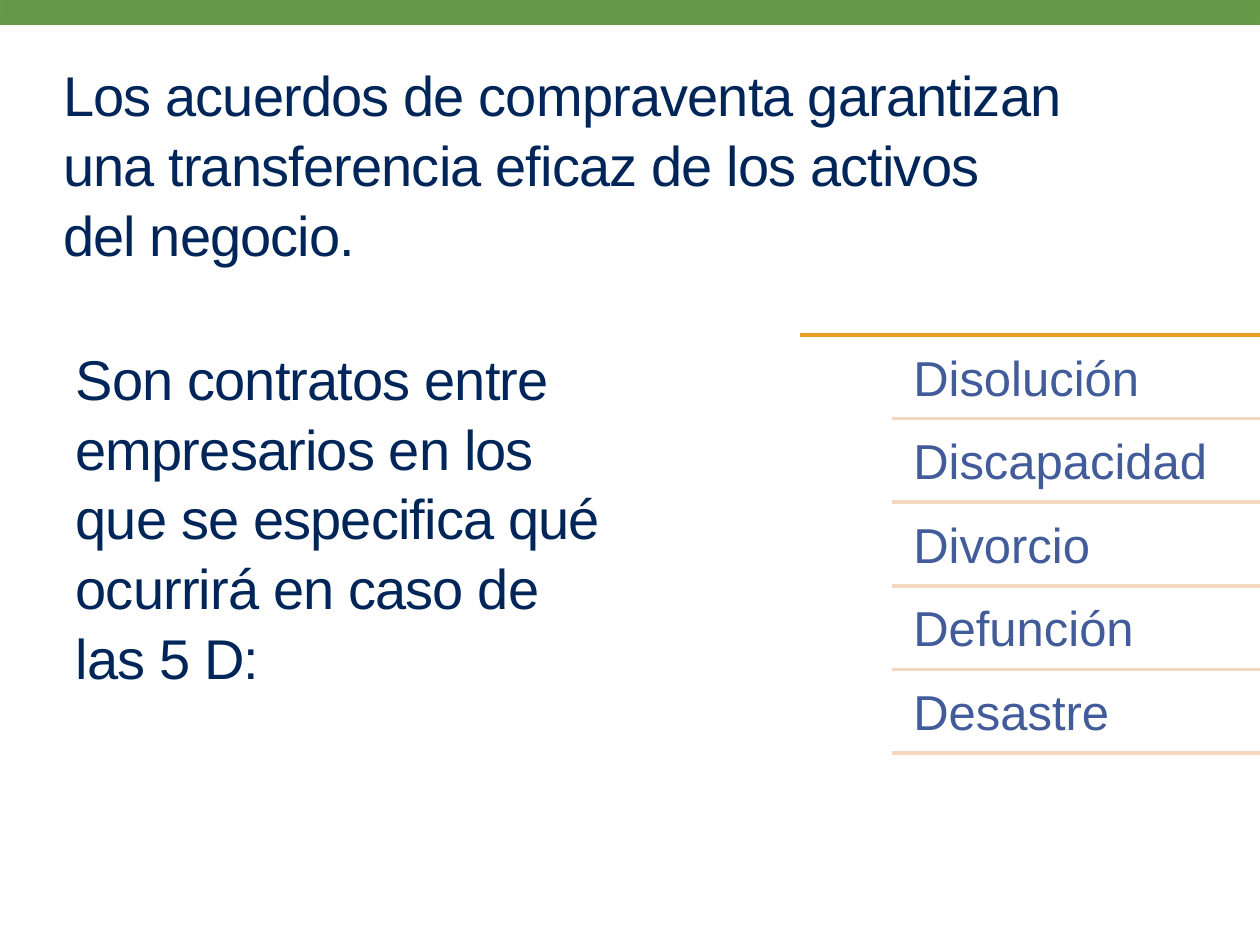
from pptx import Presentation
from pptx.dml.color import RGBColor
from pptx.enum.shapes import MSO_CONNECTOR as Connector, MSO_SHAPE as Shape
from pptx.enum.text import MSO_ANCHOR as Anchor, MSO_AUTO_SIZE as AutoSize, PP_ALIGN as Align
from pptx.oxml.ns import qn
from pptx.util import Pt

NAVY = RGBColor(0x00, 0x26, 0x59)
BLUE = RGBColor(0x41, 0x5B, 0x9B)
GREEN = RGBColor(0x66, 0x99, 0x47)
GREEN_EDGE = RGBColor(0x67, 0x9A, 0x47)
ORANGE = RGBColor(0xEA, 0x9F, 0x24)
PEACH = RGBColor(0xF5, 0xD6, 0xBE)

TITLE_LINES = [
    "Los acuerdos de compraventa garantizan",
    "una transferencia eficaz de los activos",
    "del negocio.",
]
DEFINITION = ("Son contratos entre empresarios en los que se especifica "
              "qué ocurrirá en caso de las 5 D:")
FIVE_DS = ["Disolución", "Discapacidad", "Divorcio", "Defunción", "Desastre"]

SLIDE_WIDTH = 720
LIST_TOP = 191.5
ROW_HEIGHT = 47.75


def add_run(paragraph, text, size, color, spacing=0):
    """Add a run in Arial; spacing is in hundredths of a point."""
    run = paragraph.add_run()
    run.text = text
    run.font.name = "Arial"
    run.font.size = Pt(size)
    run.font.color.rgb = color
    if spacing:
        run.font._element.set("spc", str(spacing))


def add_rule(left, y, color):
    """Draw a horizontal line from left to the right edge of the slide."""
    rule = slide.shapes.add_connector(
        Connector.STRAIGHT, Pt(left), Pt(y), Pt(SLIDE_WIDTH), Pt(y))
    rule.line.color.rgb = color
    rule.line.width = Pt(2)
    properties = rule._element.spPr
    properties.append(properties.makeelement(qn("a:effectLst"), {}))


prs = Presentation()
prs.slide_width, prs.slide_height = Pt(SLIDE_WIDTH), Pt(540)
slide = prs.slides.add_slide(prs.slide_layouts[1])

# Green band along the top
band = slide.shapes.add_shape(Shape.RECTANGLE, Pt(0), Pt(-1.1), Pt(SLIDE_WIDTH), Pt(14.4))
band.shadow.inherit = False
band.fill.solid()
band.fill.fore_color.rgb = GREEN
band.line.color.rgb = GREEN_EDGE
band.line.width = Pt(2)

# Title and definition
title = slide.shapes.title
title.left, title.top, title.width, title.height = Pt(36), Pt(37.4), Pt(648), Pt(111)
definition = slide.placeholders[1]
definition.left, definition.top = Pt(36), Pt(191.5)
definition.width, definition.height = Pt(324), Pt(229.7)

for placeholder in (title, definition):
    frame = placeholder.text_frame
    frame.word_wrap = True
    frame.auto_size = AutoSize.NONE
    paragraph = frame.paragraphs[0]
    paragraph.alignment = Align.LEFT
    paragraph.line_spacing = 1.04
    paragraph.space_before = Pt(0)

title_frame = title.text_frame
title_frame.vertical_anchor = Anchor.MIDDLE
title_frame.margin_left = title_frame.margin_right = Pt(0)
title_frame.margin_top = title_frame.margin_bottom = Pt(0)
for number, line in enumerate(TITLE_LINES):
    if number:
        title_frame.paragraphs[0].add_line_break()
    add_run(title_frame.paragraphs[0], line, 32, NAVY, -50)

definition_paragraph = definition.text_frame.paragraphs[0]
bullet_properties = definition_paragraph._p.get_or_add_pPr()
bullet_properties.set("marL", "0")
bullet_properties.set("indent", "0")
bullet_properties.append(bullet_properties.makeelement(qn("a:buNone"), {}))
add_run(definition_paragraph, DEFINITION, 32, NAVY, -50)

# The five Ds, each with a rule below
add_rule(457.2, LIST_TOP, ORANGE)
for row, cause in enumerate(FIVE_DS):
    row_top = LIST_TOP + row * ROW_HEIGHT
    label = slide.shapes.add_textbox(Pt(513.5), Pt(row_top + 2.3), Pt(206.5), Pt(45.4))
    frame = label.text_frame
    frame.word_wrap = True
    frame.margin_left = frame.margin_right = Pt(8.4)
    frame.margin_top = frame.margin_bottom = Pt(8.4)
    frame.paragraphs[0].line_spacing = 0.9
    add_run(frame.paragraphs[0], cause, 28, BLUE)
    add_rule(509.8, row_top + ROW_HEIGHT, PEACH)

prs.save("out.pptx")
